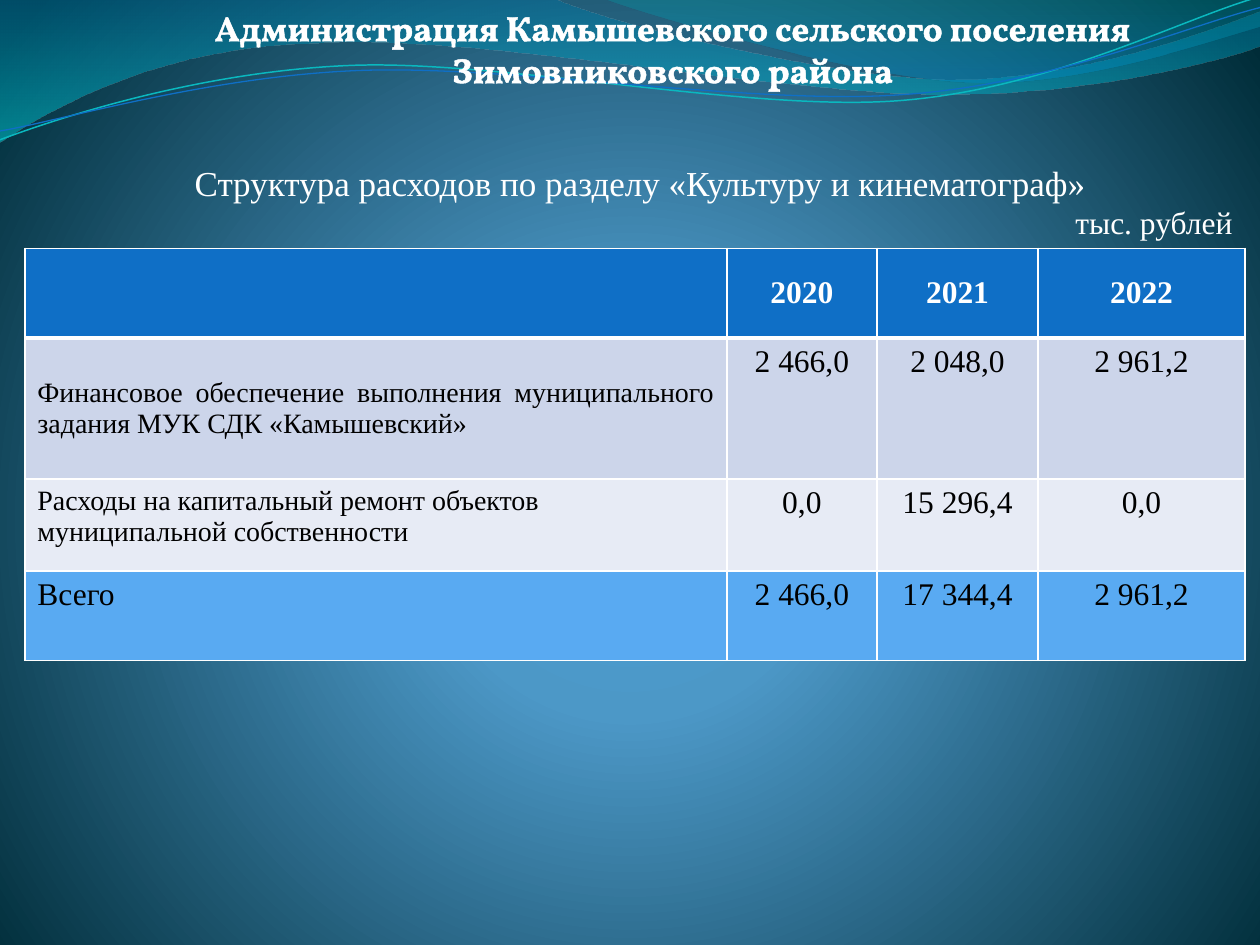
from dataclasses import dataclass

from pptx import Presentation
from pptx.dml.color import RGBColor
from pptx.enum.text import MSO_ANCHOR as Anchor, MSO_AUTO_SIZE as AutoSize, PP_ALIGN as Align
from pptx.oxml import parse_xml
from pptx.oxml.ns import nsdecls, qn
from pptx.slide import Slide
from pptx.util import Pt

WHITE = RGBColor(0xFF, 0xFF, 0xFF)
BLACK = RGBColor(0x00, 0x00, 0x00)
BLUE = RGBColor(0x0F, 0x6F, 0xC6)
CYAN = RGBColor(0x0A, 0xB8, 0xBF)
PALE_BLUE = RGBColor(0xCC, 0xD5, 0xEA)
PALE_GREY = RGBColor(0xE7, 0xEB, 0xF5)
SKY = RGBColor(0x59, 0xAA, 0xF2)
GLOW = RGBColor(0x4A, 0xA0, 0xD6)
STEEL = RGBColor(0x4C, 0x98, 0xC7)
NIGHT = RGBColor(0x00, 0x2C, 0x38)
OCEAN = RGBColor(0x00, 0x74, 0xA1)
AQUA = RGBColor(0x00, 0xC6, 0xCF)
TEAL = RGBColor(0x00, 0xA1, 0xA9)
LAGOON = RGBColor(0x00, 0x8B, 0xBF)

DOWNWARD = '<a:lin ang="5400000" scaled="0"/>'
RADIAL = '<a:path path="circle"><a:fillToRect l="10000" t="110000" r="10000" b="100000"/></a:path>'

LARGE_WAVE = [
    (0, 0), (316.8, -0.7), (342.7, 12.2, 478.1, 45.4, 545.8, 45.4),
    (614.2, 45.4, 689.8, 18.7, 720, 6.5), (720.7, 25.9),
    (707.8, 31.7, 626.4, 54.7, 537.1, 54), (447.8, 54, 275, 20.2, 185, 24.5),
    (92.9, 25.9, 33.1, 59.8, -0.7, 81.4),
]
SMALL_WAVE = [
    (344.9, -0.7), (366.5, 7.9, 491, 44.6, 553.7, 46.8),
    (616.3, 49.7, 691.9, 23, 720, 15.1), (720, 0),
]
CYAN_STREAM = [
    (-1.4, 62.9), (33.7, 51.7, 114, 29.5, 199.8, 29.9),
    (284.8, 30.3, 425.8, 67.2, 512.4, 64.8), (599, 62.4, 676.4, 25.7, 720.2, 15.5),
]
BLUE_STREAM = [
    (-1.1, 57.9), (33, 53.8, 118.3, 32.5, 204, 33),
    (290.5, 33.4, 428.9, 63.8, 515.5, 61.4), (601.4, 59.6, 678.5, 30.1, 721.4, 21.3),
]
STREAM_TILT = 357.3

COLUMN_WIDTHS = [401.2, 85.7, 92.2, 118.1]
ROW_HEIGHTS = [51.1, 80.7, 52.6, 51.2]
EXPENSES = [
    ["", "2020", "2021", "2022"],
    ["Финансовое обеспечение выполнения муниципального задания МУК СДК «Камышевский»",
     "2 466,0", "2 048,0", "2 961,2"],
    ["Расходы на капитальный ремонт объектов муниципальной собственности",
     "0,0", "15 296,4", "0,0"],
    ["Всего", "2 466,0", "17 344,4", "2 961,2"],
]
ROW_FILLS = [BLUE, PALE_BLUE, PALE_GREY, SKY]


def gradient(stops, direction):
    marks = "".join(
        f'<a:gs pos="{position * 1000}"><a:srgbClr val="{color}">'
        f'<a:alpha val="{opacity * 1000}"/></a:srgbClr></a:gs>'
        for position, color, opacity in stops)
    return parse_xml(f'<a:gradFill {nsdecls("a")} rotWithShape="1">'
                     f'<a:gsLst>{marks}</a:gsLst>{direction}</a:gradFill>')


def outline(tag, color, width):
    return parse_xml(
        f'<a:{tag} {nsdecls("a")} w="{Pt(width)}"><a:solidFill>'
        f'<a:srgbClr val="{color}"/></a:solidFill></a:{tag}>')


def draw_curve(shapes, segments, close):
    points = [(Pt(segment[i]), Pt(segment[i + 1]))
              for segment in segments for i in range(0, len(segment), 2)]
    builder = shapes.build_freeform(*points[0], scale=1.0)
    builder.add_line_segments(points[1:], close=close)
    shape = builder.convert_to_shape()
    shape.shadow.inherit = False
    lines = iter(list(shape._element.iter(qn("a:lnTo"))))
    for segment in segments[1:]:
        first = next(lines)
        if len(segment) == 6:
            bend = parse_xml(f'<a:cubicBezTo {nsdecls("a")}/>')
            first.addprevious(bend)
            for line in (first, next(lines), next(lines)):
                bend.append(line[0])
                line.getparent().remove(line)
    return shape


def write(paragraph, text, *, size=18, font="Times New Roman", color=WHITE,
          bold=False, align=Align.LEFT, edge=None):
    paragraph.alignment = align
    run = paragraph.add_run()
    run.text = text
    run.font.size = Pt(size)
    run.font.name = font
    run.font.color.rgb = color
    run.font.bold = bold
    if edge:
        run.font._element.insert(0, outline("ln", color, edge))


@dataclass
class Page:
    slide: Slide
    border: RGBColor = WHITE
    thin: float = 1
    thick: float = 3

    def background(self, stops):
        self.slide.background.fill.solid()
        properties = self.slide.background._cSld.bg.bgPr
        properties.replace(properties.find(qn("a:solidFill")), gradient(stops, RADIAL))

    def wave(self, segments, stops):
        shape = draw_curve(self.slide.shapes, segments, True)
        shape.line.fill.background()
        shape.fill.solid()
        properties = shape._element.spPr
        properties.replace(properties.find(qn("a:solidFill")), gradient(stops, DOWNWARD))

    def streams(self, curves):
        group = self.slide.shapes.add_group_shape()
        for segments, color, width in curves:
            shape = draw_curve(group.shapes, segments, False)
            shape.rotation = STREAM_TILT
            shape.fill.background()
            shape.line.color.rgb = color
            shape.line.width = Pt(width)

    def text(self, left, top, width, height, lines):
        box = self.slide.shapes.add_textbox(Pt(left), Pt(top), Pt(width), Pt(height))
        frame = box.text_frame
        frame.word_wrap = True
        frame.auto_size = AutoSize.SHAPE_TO_FIT_TEXT
        for index, (line, style) in enumerate(lines):
            paragraph = frame.add_paragraph() if index else frame.paragraphs[0]
            write(paragraph, line, **style)

    def cell(self, cell, row, column, text):
        cell.fill.solid()
        cell.fill.fore_color.rgb = ROW_FILLS[row]
        top = self.thick if row == 1 else self.thin
        bottom = self.thick if row == 0 else self.thin
        edges = [("lnL", self.thin), ("lnR", self.thin), ("lnT", top), ("lnB", bottom)]
        for index, (side, width) in enumerate(edges):
            cell._tc.tcPr.insert(index, outline(side, self.border, width))
        if (row == 0 and column) or (row, column) == (1, 0):
            cell.vertical_anchor = Anchor.MIDDLE
        if not text:
            return
        label = column == 0
        align = Align.CENTER
        if label:
            align = Align.JUSTIFY if row == 1 else Align.LEFT
        write(cell.text_frame.paragraphs[0], text, align=align, bold=row == 0,
              size=16 if label and row in (1, 2) else 18,
              color=WHITE if row == 0 else BLACK)

    def table(self, left, top, rows):
        table = self.slide.shapes.add_table(
            len(rows), len(COLUMN_WIDTHS), Pt(left), Pt(top),
            Pt(sum(COLUMN_WIDTHS)), Pt(sum(ROW_HEIGHTS))).table
        for column, width in zip(table.columns, COLUMN_WIDTHS):
            column.width = Pt(width)
        for row, height in zip(table.rows, ROW_HEIGHTS):
            row.height = Pt(height)
        for row, texts in enumerate(rows):
            for column, text in enumerate(texts):
                self.cell(table.cell(row, column), row, column, text)


def main():
    deck = Presentation()
    deck.slide_width, deck.slide_height = Pt(720), Pt(540)
    page = Page(deck.slides.add_slide(deck.slide_layouts[6]))
    page.background([(0, GLOW, 100), (25, STEEL, 100), (100, NIGHT, 100)])
    page.wave(LARGE_WAVE, [(0, OCEAN, 45), (100, AQUA, 55)])
    page.wave(SMALL_WAVE, [(0, TEAL, 30), (80, LAGOON, 45)])
    page.streams([(CYAN_STREAM, CYAN, 0.85), (BLUE_STREAM, BLUE, 0.75)])
    page.table(14.2, 142, EXPENSES)
    page.text(25.2, 88.6, 686.2, 53.3, [
        ("Структура расходов по разделу «Культуру и кинематограф» ",
         dict(size=20, align=Align.CENTER)),
        ("тыс. рублей", dict(align=Align.RIGHT)),
    ])
    page.text(110.5, 0, 547.9, 55.4, [
        ("Администрация Камышевского сельского поселения Зимовниковского района",
         dict(size=20, font="Vollkorn", bold=True, align=Align.CENTER, edge=1.45)),
    ])
    deck.save("out.pptx")


if __name__ == "__main__":
    main()
